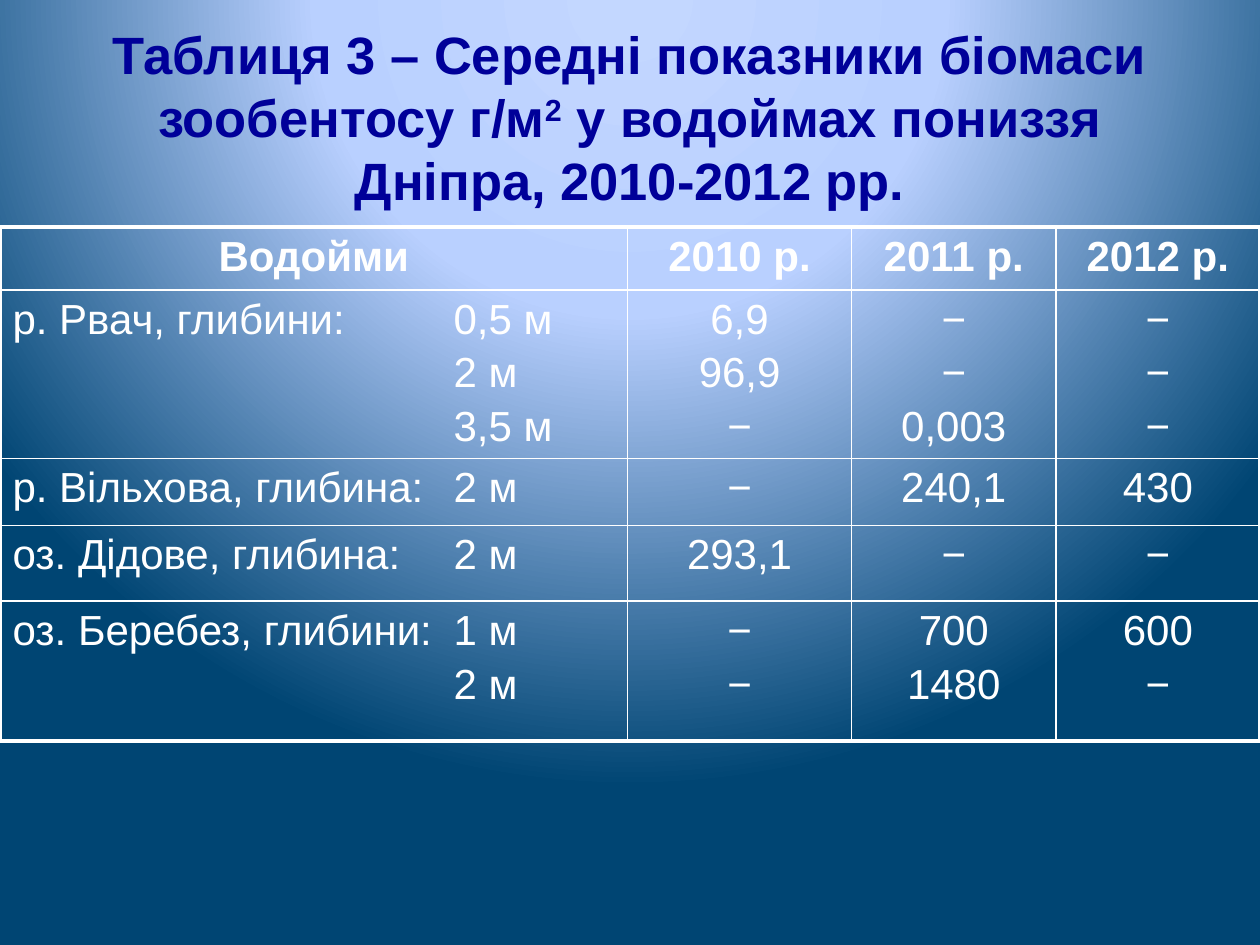
from pptx import Presentation
from pptx.dml.color import RGBColor
from pptx.enum.text import MSO_ANCHOR, PP_ALIGN
from pptx.oxml import parse_xml
from pptx.oxml.ns import nsdecls
from pptx.util import Inches, Pt

WHITE, NAVY = "FFFFFF", "000099"
STOPS = [(0, "C3D7FF"), (40, "B9D0FF"), (100, "004573")]
COLS = [4.98, 1.78, 1.62, 1.62]
ROWS = [0.5, 1.34, 0.53, 0.6, 1.11]
DEPTH = 3.5  # where the depths start, in inches from the cell's text edge
TITLE = [("Таблиця 3 – Середні показники біомаси зообентосу г/м", 0),
         ("2", 30), (" у водоймах пониззя Дніпра, 2010-2012 рр.", 0)]
DATA = [
    ["Водойми", "2010 р.", "2011 р.", "2012 р."],
    ["р. Рвач, глибини:\t0,5 м\n2 м\n3,5 м",
     "6,9\n96,9\n−", "−\n−\n0,003", "−\n−\n−"],
    ["р. Вільхова, глибина:\t2 м", "−", "240,1", "430"],
    ["оз. Дідове, глибина:\t2 м", "293,1", "−", "−"],
    ["оз. Беребез, глибини:\t1 м\n2 м", "−\n−", "700\n1480", "600\n−"],
]


def style(font, size, color, bold):
    font.name, font.size, font.bold = "Arial", Pt(size), bold
    font.color.rgb = RGBColor.from_string(color)


def add_glow(slide):
    """Fill the background with a round gradient centred above the middle."""
    stops = "".join(f'<a:gs pos="{pos * 1000}"><a:srgbClr val="{color}"/></a:gs>'
                    for pos, color in STOPS)
    slide.element.cSld.insert(0, parse_xml(
        f'<p:bg {nsdecls("p", "a")}><p:bgPr><a:gradFill rotWithShape="1">'
        f'<a:gsLst>{stops}</a:gsLst><a:path path="circle">'
        '<a:fillToRect l="50000" t="-80000" r="50000" b="180000"/></a:path>'
        '</a:gradFill><a:effectLst/></p:bgPr></p:bg>'))


def add_title(slide):
    title = slide.shapes.title
    title.left, title.top = Inches(0.5), Inches(0.3)
    title.width, title.height = Inches(9), Inches(1.25)
    frame = title.text_frame
    frame.word_wrap, frame.vertical_anchor = True, MSO_ANCHOR.MIDDLE
    para = frame.paragraphs[0]
    para.alignment = PP_ALIGN.CENTER
    for text, base in TITLE:
        run = para.add_run()
        run.text = text
        style(run.font, 30, NAVY, True)
        if base:
            run.font._element.set("baseline", str(base * 1000))


def set_edges(cell, row, col):
    """Draw thick lines on the table's rim and thin ones inside."""
    rims = {"L": col == 0, "R": col == len(COLS) - 1,
            "T": row == 0, "B": row == len(ROWS) - 1}
    props = cell._tc.get_or_add_tcPr()
    for spot, (side, rim) in enumerate(rims.items()):
        width = Pt(2.25 if rim else 1)
        props.insert(spot, parse_xml(
            f'<a:ln{side} {nsdecls("a")} w="{width}"><a:solidFill>'
            f'<a:srgbClr val="{WHITE}"/></a:solidFill></a:ln{side}>'))


def set_depth(para, first):
    """Line up depths: a tab stop on the first line, an indent below it."""
    props = para._p.get_or_add_pPr()
    if first:
        props.append(parse_xml(
            f'<a:tabLst {nsdecls("a")}>'
            f'<a:tab pos="{Inches(DEPTH)}" algn="l"/></a:tabLst>'))
    else:
        props.set("marL", str(Inches(DEPTH)))
        props.set("indent", "0")


def fill_cell(cell, text, row, col):
    cell.fill.background()
    set_edges(cell, row, col)
    cell.text_frame.text = text
    for num, para in enumerate(cell.text_frame.paragraphs):
        para.space_before = Pt(4)
        if row and not col:
            para.alignment = PP_ALIGN.LEFT
            set_depth(para, num == 0)
        else:
            para.alignment = PP_ALIGN.CENTER
        for run in para.runs:
            style(run.font, 24, WHITE, row == 0)


def add_grid(slide):
    table = slide.shapes.add_table(
        len(ROWS), len(COLS), 0, Inches(1.8),
        Inches(sum(COLS)), Inches(sum(ROWS))).table
    table.first_row = table.horz_banding = False
    for col, width in zip(table.columns, COLS):
        col.width = Inches(width)
    for row, height in zip(table.rows, ROWS):
        row.height = Inches(height)
    for row, texts in enumerate(DATA):
        for col, text in enumerate(texts):
            fill_cell(table.cell(row, col), text, row, col)


def main():
    deck = Presentation()
    deck.slide_width, deck.slide_height = Inches(10), Inches(7.5)
    slide = deck.slides.add_slide(deck.slide_layouts[5])
    add_glow(slide)
    add_title(slide)
    add_grid(slide)
    deck.save("out.pptx")


if __name__ == "__main__":
    main()
